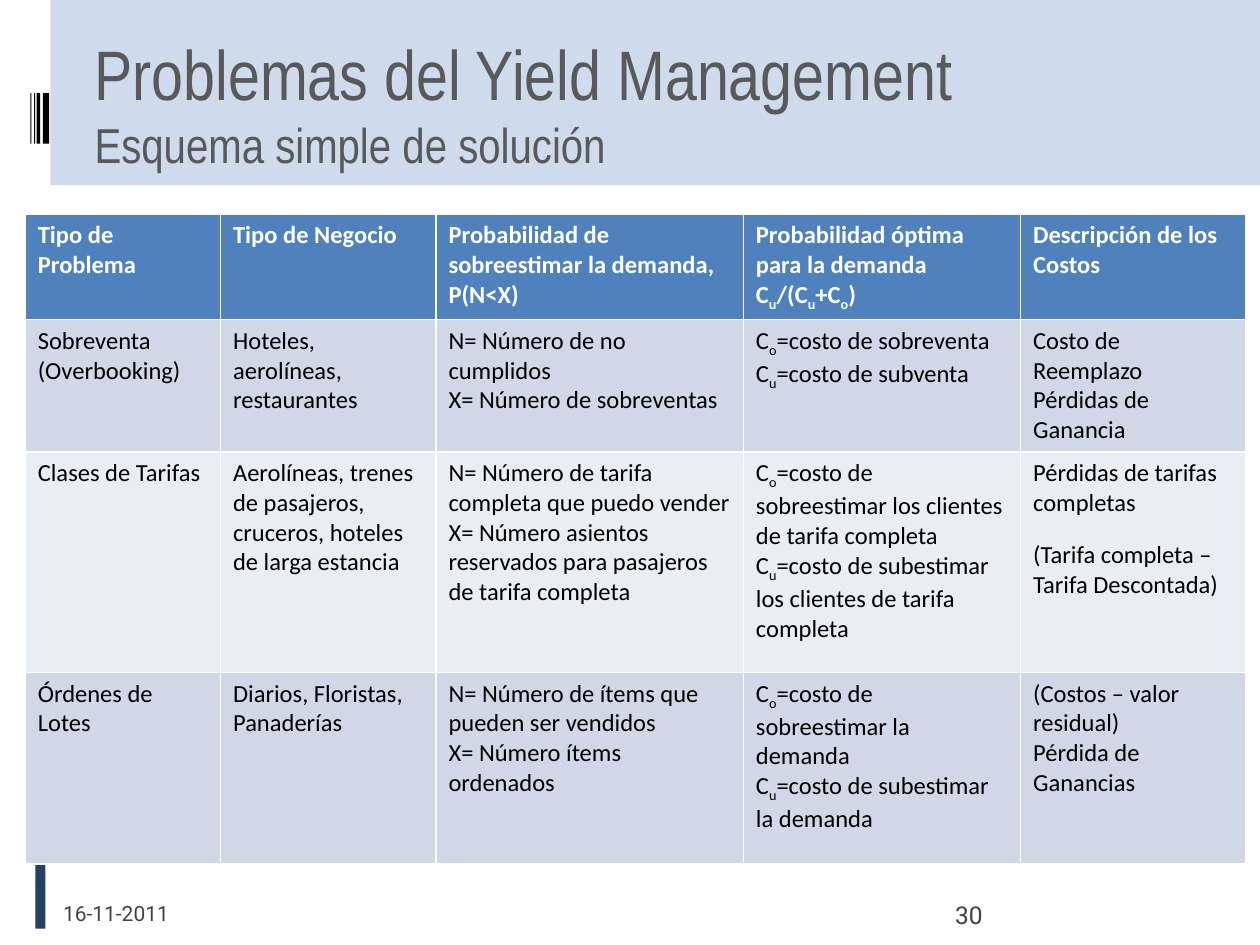
from dataclasses import dataclass

from pptx import Presentation
from pptx import util as u
from pptx.dml.color import RGBColor
from pptx.enum import shapes, text
from pptx.oxml.xmlchemy import OxmlElement


@dataclass(frozen=True)
class Theme:
    """Colours, fonts and type sizes of the slide."""

    band: str = "B9CDE5"
    paper: str = "FFFFFF"
    accent: str = "254061"
    ink: str = "000000"
    title: str = "595959"
    footer: str = "424242"
    header: str = "4F81BD"
    rows: tuple = ("E9EDF4", "D0D8E8")
    title_font: str = "Arial Narrow"
    table_font: str = "Calibri"
    footer_font: str = "Roboto"
    title_size: int = 40
    subtitle_size: int = 28
    table_size: int = 14
    date_size: int = 12
    number_size: int = 14


THEME = Theme()
BARCODE = [(0.34, 0.05), (0.29, 0.03), (0.27, 0.01), (0.24, 0.01)]
COLUMN_WIDTHS = [1.55, 1.71, 2.44, 2.2, 1.79]
ROW_HEIGHTS = [0.83, 1.05, 1.75, 1.52]
TABLE_ROWS = [
    ["Tipo de Problema", "Tipo de Negocio",
     "Probabilidad de sobreestimar la demanda, P(N<X)",
     "Probabilidad óptima para la demanda C_u/(C_u+C_o)",
     "Descripción de los Costos"],
    ["Sobreventa\n(Overbooking)", "Hoteles, aerolíneas, restaurantes",
     "N= Número de no cumplidos\nX= Número de sobreventas",
     "C_o=costo de sobreventa\nC_u=costo de subventa",
     "Costo de Reemplazo\nPérdidas de Ganancia"],
    ["Clases de Tarifas",
     "Aerolíneas, trenes de pasajeros, cruceros, hoteles de larga estancia",
     "N= Número de tarifa completa que puedo vender\n"
     "X= Número asientos reservados para pasajeros de tarifa completa",
     "C_o=costo de sobreestimar los clientes de tarifa completa\n"
     "C_u=costo de subestimar los clientes de tarifa completa",
     "Pérdidas de tarifas completas\n(Tarifa completa – Tarifa Descontada)"],
    ["Órdenes de Lotes", "Diarios, Floristas, Panaderías",
     "N= Número de ítems que pueden ser vendidos\nX= Número ítems ordenados",
     "C_o=costo de sobreestimar la demanda\nC_u=costo de subestimar la demanda",
     "(Costos – valor residual)\nPérdida de Ganancias"],
]


def style_font(font, name, size, color, bold=None):
    """Set the typeface, size, colour and weight of a font."""
    font.name, font.size, font.bold = name, u.Pt(size), bold
    font.color.rgb = RGBColor.from_string(color)


def set_frame(frame, top=0):
    """Anchor a text frame at the bottom with the given top inset."""
    frame.word_wrap = True
    frame.auto_size = text.MSO_AUTO_SIZE.NONE
    frame.vertical_anchor = text.MSO_ANCHOR.BOTTOM
    frame.margin_left = frame.margin_right = frame.margin_bottom = 0
    frame.margin_top = u.Inches(top)


def add_block(slide, left, top, width, height, color, opacity=100):
    """Add a plain filled rectangle."""
    shape = slide.shapes.add_shape(
        shapes.MSO_SHAPE.RECTANGLE, *map(u.Inches, (left, top, width, height)))
    shape.shadow.inherit = False
    shape.line.fill.background()
    shape.fill.solid()
    shape.fill.fore_color.rgb = RGBColor.from_string(color)
    if opacity < 100:
        alpha = OxmlElement("a:alpha")
        alpha.set("val", str(opacity * 1000))
        shape.element.spPr.find(".//{*}srgbClr").append(alpha)


def add_title(slide, heading, subheading):
    """Fill the title placeholder and bring it in front of the band."""
    title = slide.shapes.title
    title.left, title.top, title.width, title.height = map(
        u.Inches, (0.75, 0.13, 8.82, 1.25))
    set_frame(title.text_frame, top=0.05)
    paragraph = title.text_frame.paragraphs[0]
    paragraph.alignment = text.PP_ALIGN.LEFT
    style_font(paragraph.font, THEME.title_font, THEME.title_size, THEME.title)
    for words, size in ((heading, THEME.title_size), (subheading, THEME.subtitle_size)):
        if paragraph.runs:
            paragraph.add_line_break()
        run = paragraph.add_run()
        run.text = words
        style_font(run.font, THEME.title_font, size, THEME.title)
    title.element.getparent().append(title.element)


def add_footer(slide, words, left, top, width, size, alignment):
    """Add a line of footer text."""
    box = slide.shapes.add_textbox(*map(u.Inches, (left, top, width, 0.4)))
    set_frame(box.text_frame)
    paragraph = box.text_frame.paragraphs[0]
    paragraph.text = words
    paragraph.alignment = alignment
    style_font(paragraph.font, THEME.footer_font, size, THEME.footer)


def write_line(paragraph, line, color, bold):
    """Write a line in which an underscore lowers the next letter."""
    style_font(paragraph.font, THEME.table_font, THEME.table_size, color, bold)
    first, *rest = line.split("_")
    paragraph.add_run().text = first
    for part in rest:
        subscript = paragraph.add_run()
        subscript.text = part[0]
        subscript.font._element.set("baseline", "-25000")
        paragraph.add_run().text = part[1:]


def fill_cell(cell, content, fill, color, bold):
    """Colour a cell and write its lines as paragraphs."""
    cell.fill.solid()
    cell.fill.fore_color.rgb = RGBColor.from_string(fill)
    frame = cell.text_frame
    for index, line in enumerate(content.split("\n")):
        paragraph = frame.add_paragraph() if index else frame.paragraphs[0]
        write_line(paragraph, line, color, bold)
        if line.startswith("(Tarifa"):
            paragraph.space_before = u.Pt(13)


def add_problem_table(slide):
    """Add the table of problem types."""
    table = slide.shapes.add_table(
        len(TABLE_ROWS), len(COLUMN_WIDTHS), u.Inches(0.2), u.Inches(1.7),
        u.Inches(sum(COLUMN_WIDTHS)), u.Inches(sum(ROW_HEIGHTS))).table
    for column, width in zip(table.columns, COLUMN_WIDTHS):
        column.width = u.Inches(width)
    for index, (row, height) in enumerate(zip(table.rows, ROW_HEIGHTS)):
        row.height = u.Inches(height)
        is_header = index == 0
        fill = THEME.header if is_header else THEME.rows[index % 2]
        color = THEME.paper if is_header else THEME.ink
        for cell, content in zip(row.cells, TABLE_ROWS[index]):
            fill_cell(cell, content, fill, color, is_header)


def main():
    """Build and save the slide."""
    presentation = Presentation()
    presentation.slide_width, presentation.slide_height = u.Inches(10), u.Inches(7.5)
    slide = presentation.slides.add_slide(presentation.slide_layouts[5])
    add_block(slide, 0, 0, 10, 1.47, THEME.band, opacity=70)
    add_block(slide, 0, 0, 0.4, 7.5, THEME.paper)
    add_block(slide, 0.28, 5.52, 0.08, 1.85, THEME.accent)
    for left, width in BARCODE:
        add_block(slide, left, 0.74, width, 0.4, THEME.ink)
    add_title(slide, "Problemas del Yield Management", "Esquema simple de solución")
    add_footer(slide, "16-11-2011", 0.5, 6.95, 1.11, THEME.date_size, text.PP_ALIGN.LEFT)
    add_footer(slide, "30", 6.97, 6.98, 0.83, THEME.number_size, text.PP_ALIGN.RIGHT)
    add_problem_table(slide)
    presentation.save("out.pptx")


if __name__ == "__main__":
    main()
